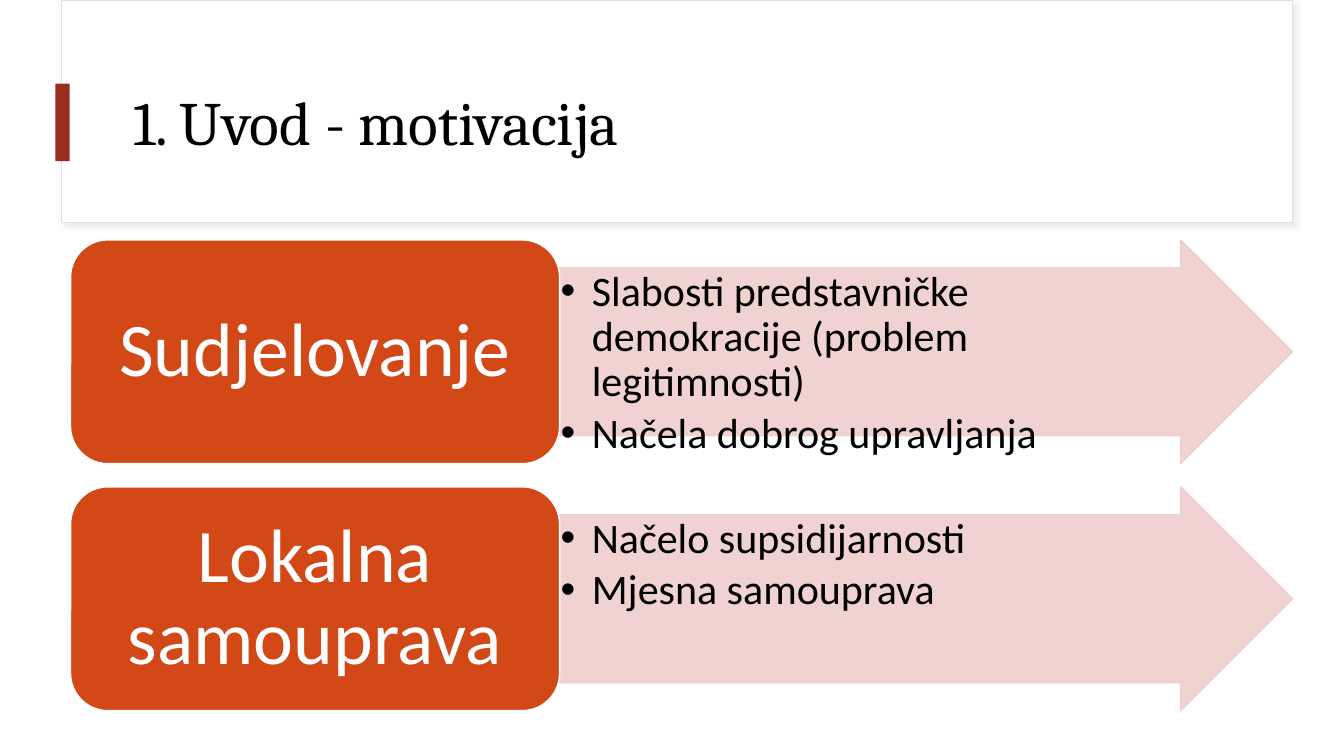
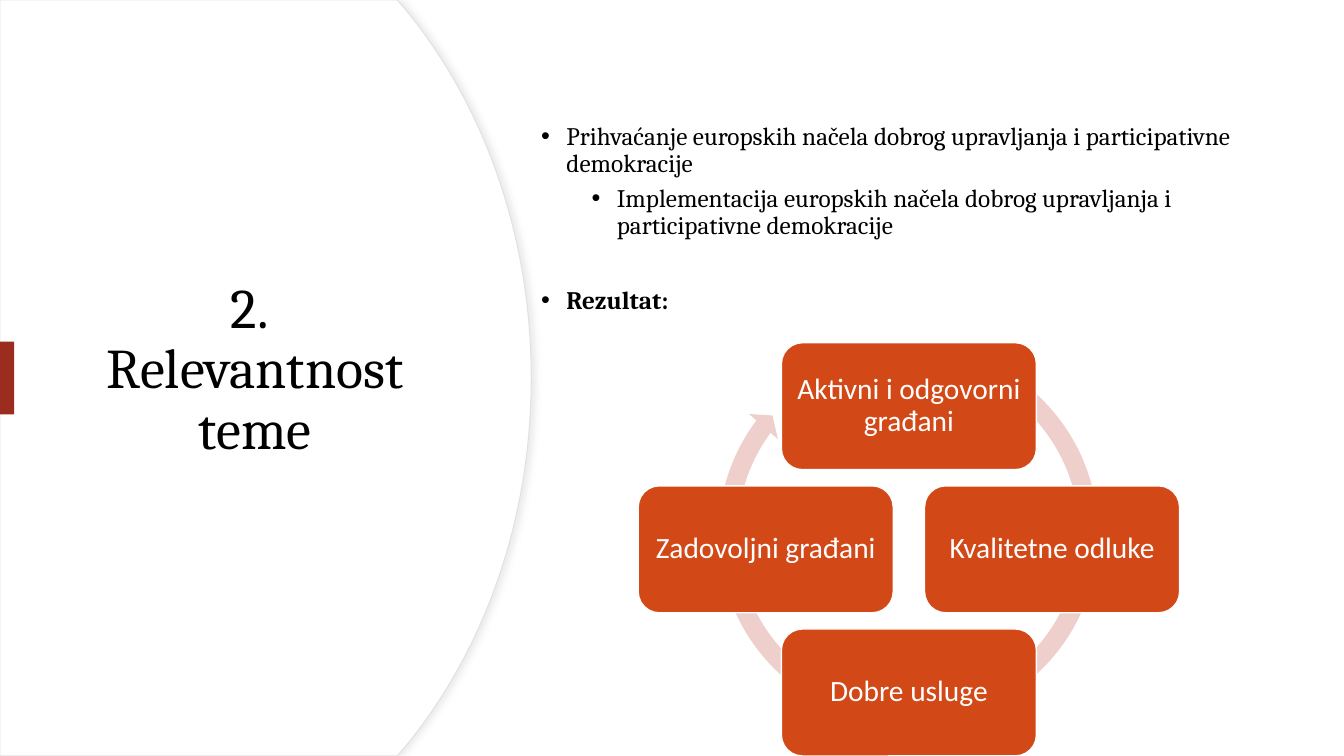
from lxml import etree
from pptx import Presentation
from pptx.dml.color import RGBColor
from pptx.enum import shapes, text
from pptx.oxml import ns
from pptx.util import Pt

PX = 9144  # 100 px to the inch
WHITE = RGBColor(0xFF, 0xFF, 0xFF)
BLACK = RGBColor(0, 0, 0)
EDGE = RGBColor(0xE1, 0xE1, 0xE1)
SHADE = RGBColor(0xD9, 0xD9, 0xD9)
RED = RGBColor(0x9B, 0x2D, 0x1F)
ORANGE = RGBColor(0xD3, 0x48, 0x17)
PINK = RGBColor(0xEF, 0xCF, 0xCC)

HEAD, BODY = "Cambria", "Calibri"
KIND = shapes.MSO_SHAPE
ALIGN = text.PP_ALIGN
ANCHOR = text.MSO_ANCHOR


def px(*vals):
    return [round(v * PX) for v in vals]


def put(item, **vals):
    for name, val in vals.items():
        setattr(item, name, val)


def child(node, tag, **attrs):
    return etree.SubElement(node, ns.qn(tag), attrs)


# Shape looks
def paint(shape, fill, line=None, width=0.75):
    shape.shadow.inherit = False
    shape.fill.solid()
    shape.fill.fore_color.rgb = fill
    if line is None:
        shape.line.fill.background()
    else:
        shape.line.color.rgb = line
        shape.line.width = Pt(width)
    return shape


def fade(shape, share):
    for color in shape.element.spPr.iter(ns.qn("a:srgbClr")):
        child(color, "a:alpha", val=str(share * 1000))


def cast(shape, angle):
    effects = shape.element.spPr.find(ns.qn("a:effectLst"))
    outer = child(effects, "a:outerShdw", blurRad=str(Pt(4)), dist=str(Pt(3)),
                  dir=str(angle * 60000), algn="tl", rotWithShape="0")
    child(child(outer, "a:srgbClr", val=str(SHADE)), "a:alpha", val="50000")


def block(slide, kind, box, fill, line=None, width=0.75):
    return paint(slide.shapes.add_shape(kind, *px(*box)), fill, line, width)


# Text
def frame(shape, inset, anchor=ANCHOR.MIDDLE):
    left, top, right, base = px(*inset)
    put(shape.text_frame, word_wrap=True, auto_size=text.MSO_AUTO_SIZE.NONE,
        vertical_anchor=anchor, margin_left=left, margin_top=top,
        margin_right=right, margin_bottom=base)
    return shape.text_frame


def write(para, words, size, face, color, align=ALIGN.LEFT, bold=False,
          before=0, after=0):
    para.text = words
    put(para, alignment=align, line_spacing=0.9,
        space_before=Pt(before), space_after=Pt(after))
    for run in para.runs:
        put(run.font, name=face, size=Pt(size), bold=bold)
        run.font.color.rgb = color


def dot(para, left, hang):
    props = para._p.get_or_add_pPr()
    props.set("marL", str(left * PX))
    props.set("indent", str(-hang * PX))
    child(props, "a:buFont", typeface="Arial")
    child(props, "a:buChar", char="•")


def lines(body, count):
    return [body.paragraphs[0]] + [body.add_paragraph() for _ in range(count - 1)]


# Shared parts
def start(deck, words, box, size, align, panel, mark):
    slide = deck.slides.add_slide(deck.slide_layouts[5])
    title = slide.shapes.title
    left, top, width, height = px(*box)
    put(title, left=left, top=top, width=width, height=height)
    body = frame(title, (10, 5, 10, 5))
    write(body.paragraphs[0], words, size, HEAD, BLACK, align)
    title.element.addprevious(panel(slide).element)
    block(slide, KIND.RECTANGLE, mark, RED)
    return slide


def card(slide, box, words, size, inset):
    shape = block(slide, KIND.ROUNDED_RECTANGLE, box, ORANGE, WHITE, 1)
    body = frame(shape, inset)
    write(body.paragraphs[0], words, size, BODY, WHITE, ALIGN.CENTER)


# Title panels
def sheet(slide):
    shape = block(slide, KIND.RECTANGLE, (61, 0, 1221, 221), WHITE, EDGE)
    cast(shape, 45)
    return shape


def curve(ends, steps=24):
    for i in range(steps + 1):
        t = i / steps
        mix = ((1 - t) ** 3, 3 * t * (1 - t) ** 2, 3 * t * t * (1 - t), t ** 3)
        yield tuple(sum(m * p[k] for m, p in zip(mix, ends)) for k in (0, 1))


def disc(slide):
    upper = list(curve([(401, 8), (479, 102), (527, 232), (527, 375)]))
    lower = [(x, 750 - y) for x, y in reversed(upper[:-1])]
    points = [(394, 0), *upper, *lower, (394, 750), (0, 750)]
    outline = slide.shapes.build_freeform(0, 0)
    outline.add_line_segments([px(*p) for p in points], close=True)
    shape = paint(outline.convert_to_shape(), WHITE, EDGE)
    cast(shape, 0)
    return shape


# Rows of a card and an arrow
def row(slide, top, name, items):
    arrow = block(slide, KIND.RIGHT_ARROW, (554, top, 728, 222), PINK, PINK, 1)
    arrow.adjustments[0], arrow.adjustments[1] = 0.75, 0.5
    fade(arrow, 90)
    body = frame(arrow, (2, 2, 58, 2), ANCHOR.TOP)
    for para, words in zip(lines(body, len(items)), items):
        write(para, words, 30, BODY, BLACK, after=4.5)
        dot(para, 31, 31)
    card(slide, (70, top, 485, 222), name, 54, (23, 11, 23, 11))


def intro(deck):
    slide = start(deck, "1. Uvod - motivacija", (122, 60, 1112, 129), 44,
                  ALIGN.LEFT, sheet, (55, 83, 14, 77))
    rows = [
        ("Sudjelovanje",
         ["Slabosti predstavničke demokracije (problem legitimnosti)",
          "Načela dobrog upravljanja"]),
        ("Lokalna samouprava",
         ["Načelo supsidijarnosti", "Mjesna samouprava"]),
    ]
    for i, (name, items) in enumerate(rows):
        row(slide, 238 + 245 * i, name, items)


# Bullets and cycle
def notes(slide):
    items = [
        ("Prihvaćanje europskih načela dobrog upravljanja i participativne "
         "demokracije", 25, 0, False),
        ("Implementacija europskih načela dobrog upravljanja i participativne "
         "demokracije", 75, 5, False),
        ("Rezultat:", 25, 34, True),
    ]
    box = slide.shapes.add_textbox(*px(527, 123, 766, 195))
    body = frame(box, (10, 0, 10, 0), ANCHOR.TOP)
    for para, (words, left, gap, bold) in zip(lines(body, len(items)), items):
        write(para, words, 18, HEAD, BLACK, bold=bold, before=gap)
        dot(para, left, 25)


def cycle(slide):
    ring = block(slide, KIND.CIRCULAR_ARROW, (703, 332, 396, 396), PINK)
    for i, val in enumerate((0.047, 2.729, 129.96, 179.196, 0.048)):
        ring.adjustments[i] = val
    steps = [
        ("Aktivni i odgovorni građani", 0, -1),
        ("Kvalitetne odluke", 1, 0),
        ("Dobre usluge", 0, 1),
        ("Zadovoljni građani", -1, 0),
    ]
    for words, dx, dy in steps:
        box = (775 + 142 * dx, 482 + 142 * dy, 253, 126)
        card(slide, box, words, 21, (8, 8, 8, 8))


def theme(deck):
    slide = start(deck, "2. \vRelevantnost teme", (56, 120, 394, 495), 40,
                  ALIGN.CENTER, disc, (0, 339, 14, 72))
    notes(slide)
    cycle(slide)


def main():
    deck = Presentation()
    put(deck, slide_width=1333 * PX, slide_height=750 * PX)
    intro(deck)
    theme(deck)
    deck.save("out.pptx")


if __name__ == "__main__":
    main()
